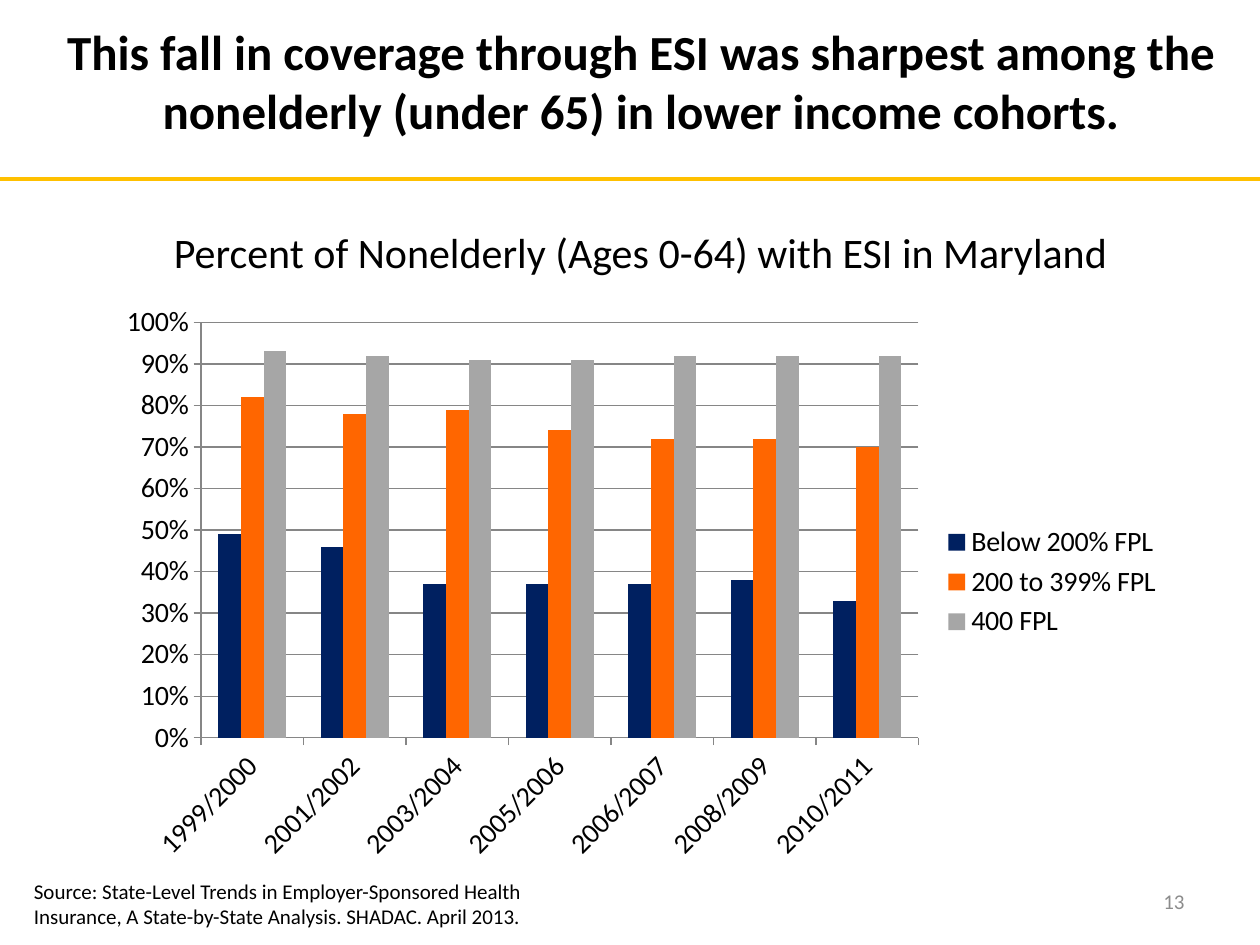
from dataclasses import dataclass

from lxml.etree import SubElement
from pptx import Presentation
from pptx.chart.data import CategoryChartData
from pptx.dml.color import RGBColor
from pptx.enum.chart import XL_CHART_TYPE, XL_LEGEND_POSITION, XL_TICK_MARK
from pptx.enum.shapes import MSO_CONNECTOR
from pptx.enum.text import MSO_ANCHOR, PP_ALIGN
from pptx.oxml import parse_xml
from pptx.oxml.ns import nsdecls, qn
from pptx.util import Inches, Pt


@dataclass(frozen=True)
class Theme:
    font: str = "Calibri"
    ink: str = "000000"
    muted: str = "8C8C8C"
    rule: str = "FFC000"
    grid: str = "868686"
    series: tuple = ("002060", "FF6600", "A6A6A6")
    title_size: int = 28
    subtitle_size: int = 24
    chart_size: int = 16
    small_size: int = 12


THEME = Theme()

PERIODS = ("1999/2000", "2001/2002", "2003/2004", "2005/2006",
           "2006/2007", "2008/2009", "2010/2011")
COVERAGE = {
    "Below 200% FPL": (0.49, 0.46, 0.37, 0.37, 0.37, 0.38, 0.33),
    "200 to 399% FPL": (0.82, 0.78, 0.79, 0.74, 0.72, 0.72, 0.70),
    "400 FPL": (0.93, 0.92, 0.91, 0.91, 0.92, 0.92, 0.92),
}


def inches(*lengths):
    return [Inches(length) for length in lengths]


def color(name):
    return RGBColor.from_string(name)


def set_font(font, size, ink=THEME.ink, bold=False):
    font.name = THEME.font
    font.size = Pt(size)
    font.bold = bold
    font.color.rgb = color(ink)


def write(box, text, size, align=PP_ALIGN.LEFT, anchor=MSO_ANCHOR.TOP,
          ink=THEME.ink, bold=False):
    frame = box.text_frame
    frame.word_wrap = True
    frame.vertical_anchor = anchor
    frame.text = text
    para = frame.paragraphs[0]
    para.alignment = align
    set_font(para.font, size, ink, bold)


def add_text(page, bounds, text, size, **style):
    write(page.shapes.add_textbox(*inches(*bounds)), text, size, **style)


def add_heading(page, bounds, text):
    title = page.shapes.title
    title.left, title.top, title.width, title.height = inches(*bounds)
    write(title, text, THEME.title_size, align=PP_ALIGN.CENTER, bold=True)
    title.text_frame.paragraphs[0].line_spacing = 1.0


def add_rule(page, top, width):
    rule = page.shapes.add_connector(
        MSO_CONNECTOR.STRAIGHT, *inches(0, top, width, top))
    rule.line.color.rgb = color(THEME.rule)
    rule.line.width = Pt(2.25)
    SubElement(rule._element.spPr, qn("a:effectLst"))


def set_plot_layout(chart, **fractions):
    """Fix the inner plot area as fractions of the chart's size."""
    values = "".join(f'<c:{name} val="{value}"/>'
                     for name, value in fractions.items())
    layout = parse_xml(
        f'<c:layout {nsdecls("c")}><c:manualLayout>'
        '<c:layoutTarget val="inner"/><c:xMode val="edge"/>'
        f'<c:yMode val="edge"/>{values}</c:manualLayout></c:layout>')
    plot_area = chart._chartSpace.chart.plotArea
    for old in plot_area.findall(qn("c:layout")):
        plot_area.remove(old)
    plot_area.insert(0, layout)


def style_axis(axis):
    axis.major_tick_mark = XL_TICK_MARK.OUTSIDE
    axis.minor_tick_mark = XL_TICK_MARK.NONE
    axis.format.line.color.rgb = color(THEME.grid)
    set_font(axis.tick_labels.font, THEME.chart_size)


def add_coverage_chart(page, bounds):
    data = CategoryChartData(number_format="0%")
    data.categories = PERIODS
    for name, shares in COVERAGE.items():
        data.add_series(name, shares)
    chart = page.shapes.add_chart(
        XL_CHART_TYPE.COLUMN_CLUSTERED, *inches(*bounds), data).chart
    chart.has_title = False
    set_font(chart.font, THEME.chart_size)
    set_plot_layout(chart, x=0.09, y=0.05, w=0.67, h=0.72)

    plot = chart.plots[0]
    plot.vary_by_categories = False
    plot.gap_width = 150
    plot.overlap = 0
    for series, fill in zip(plot.series, THEME.series):
        series.format.fill.solid()
        series.format.fill.fore_color.rgb = color(fill)

    style_axis(chart.category_axis)
    labels = chart.category_axis._element.find(qn("c:txPr"))
    labels.find(qn("a:bodyPr")).set("rot", "-2700000")

    shares = chart.value_axis
    style_axis(shares)
    shares.minimum_scale, shares.maximum_scale, shares.major_unit = 0, 1, 0.1
    shares.tick_labels.number_format = "0%"
    shares.tick_labels.number_format_is_linked = False
    shares.has_major_gridlines = True
    shares.major_gridlines.format.line.color.rgb = color(THEME.grid)

    chart.has_legend = True
    chart.legend.position = XL_LEGEND_POSITION.RIGHT
    chart.legend.include_in_layout = False
    set_font(chart.legend.font, THEME.chart_size)


def main():
    deck = Presentation()
    deck.slide_width, deck.slide_height = inches(10, 7.5)
    page = deck.slides.add_slide(deck.slide_layouts[5])

    add_heading(page, (0.17, 0.12, 9.83, 1.04),
                "This fall in coverage through ESI was sharpest among the "
                "nonelderly (under 65) in lower income cohorts.")
    add_rule(page, top=1.42, width=10)
    add_text(page, (0.25, 1.75, 9.67, 0.5),
             "Percent of Nonelderly (Ages 0-64) with ESI in Maryland",
             THEME.subtitle_size, align=PP_ALIGN.CENTER)
    add_coverage_chart(page, (0.83, 2.33, 8.5, 4.58))
    add_text(page, (0.17, 6.92, 4.75, 0.5),
             "Source: State-Level Trends in Employer-Sponsored Health "
             "Insurance, A State-by-State Analysis. SHADAC. April 2013.",
             THEME.small_size)
    add_text(page, (7.17, 6.95, 2.33, 0.4), "13", THEME.small_size,
             align=PP_ALIGN.RIGHT, anchor=MSO_ANCHOR.MIDDLE, ink=THEME.muted)
    deck.save("out.pptx")


if __name__ == "__main__":
    main()
